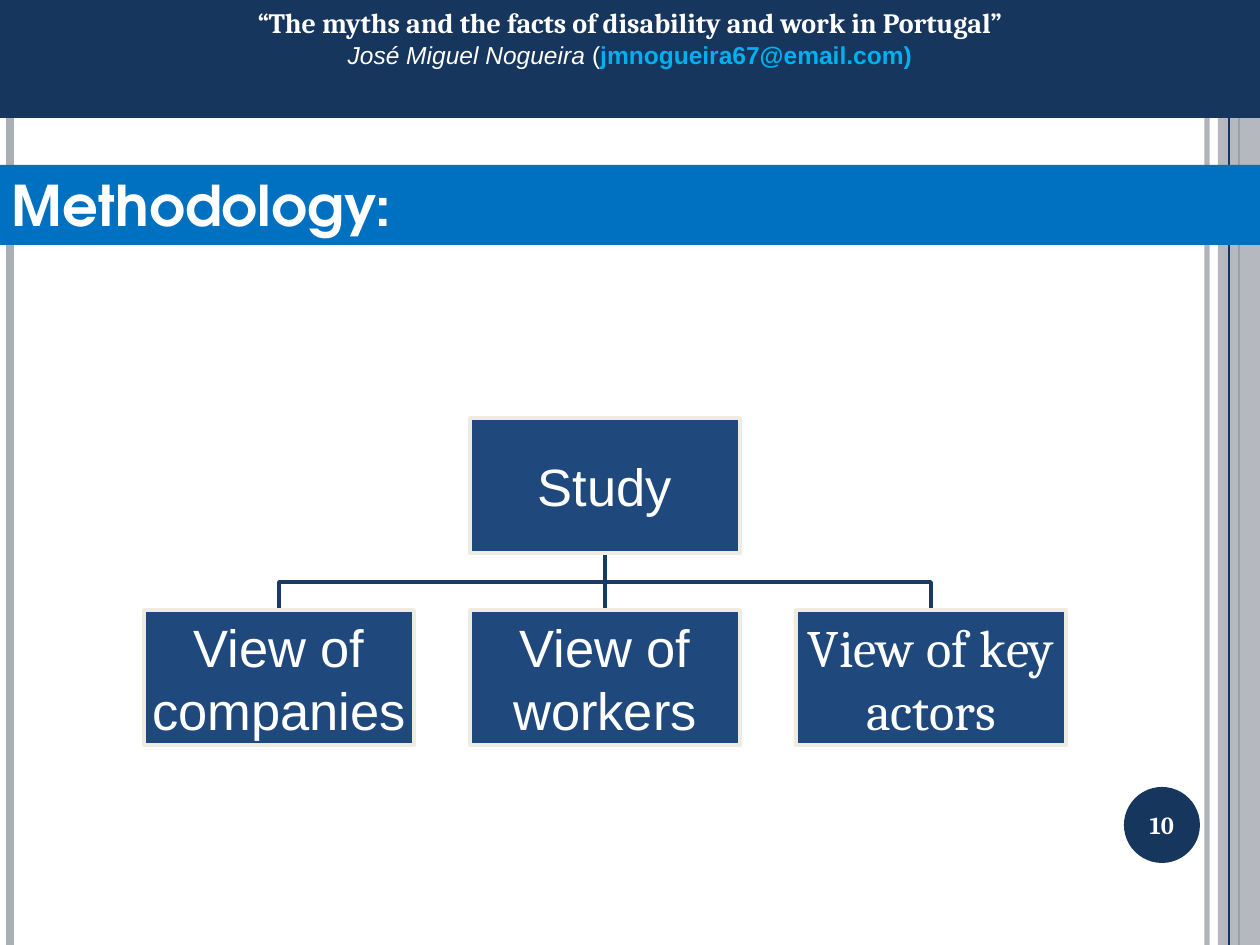
from dataclasses import dataclass

from lxml.etree import SubElement
from pptx import Presentation
from pptx.dml.color import RGBColor as RGB
from pptx.enum.shapes import MSO_CONNECTOR as Link, MSO_SHAPE as Shape
from pptx.enum.text import MSO_ANCHOR as Anchor, PP_ALIGN as Align
from pptx.oxml.ns import qn
from pptx.util import Emu, Pt

SCALE = 914400 / 126


def px(n):
    return Emu(round(n * SCALE))


@dataclass(frozen=True)
class Theme:
    navy: str = "17365D"
    blue: str = "0070C0"
    sky: str = "00B0F0"
    box: str = "1F497D"
    edge: str = "EEECE1"
    link: str = "193A64"
    grey: str = "ACAEB6"
    white: str = "FFFFFF"
    sans: str = "Arial"
    serif: str = "Cambria"
    head: str = "TeX Gyre Adventor"
    title: int = 32
    body: int = 30
    top: int = 16
    small: int = 14


def write(para, text, font, size, color, bold=False, italic=False):
    run = para.add_run()
    run.text = text
    face = run.font
    face.name, face.size = font, Pt(size)
    face.bold, face.italic = bold, italic
    face.color.rgb = RGB.from_string(color)


def fade(fill, alpha):
    """Set the opacity, in percent, of a solid fill."""
    color = fill.find(".//" + qn("a:srgbClr"))
    SubElement(color, qn("a:alpha")).set("val", str(alpha * 1000))


class Page:
    def __init__(self, slide, theme):
        self.slide, self.theme = slide, theme

    def ink(self, item, color, width):
        item.line.color.rgb = RGB.from_string(color)
        item.line.width = Pt(width)

    def line(self, x1, y1, x2, y2, color, width, alpha=100):
        item = self.slide.shapes.add_connector(
            Link.STRAIGHT, px(x1), px(y1), px(x2), px(y2))
        self.ink(item, color, width)
        props = item._element.spPr
        SubElement(props, qn("a:effectLst"))
        if alpha < 100:
            fade(props, alpha)

    def elbow(self, x1, y1, x2, y2, color, width):
        mid = (y1 + y2) / 2
        path = self.slide.shapes.build_freeform(x1, y1, scale=SCALE)
        path.add_line_segments([(x1, mid), (x2, mid), (x2, y2)], close=False)
        item = path.convert_to_shape()
        item.shadow.inherit = False
        item.fill.background()
        self.ink(item, color, width)

    def shape(self, x, y, w, h, fill, kind=Shape.RECTANGLE, edge=None, alpha=100):
        item = self.slide.shapes.add_shape(kind, px(x), px(y), px(w), px(h))
        item.shadow.inherit = False
        item.fill.solid()
        item.fill.fore_color.rgb = RGB.from_string(fill)
        if edge:
            self.ink(item, edge, 2)
        else:
            item.line.fill.background()
        if alpha < 100:
            fade(item._element.spPr, alpha)
        return item

    def frame(self, item, anchor=Anchor.MIDDLE, align=Align.CENTER, inset=(12, 6)):
        """Ready the text of a shape and return its frame."""
        frame = item.text_frame
        frame.word_wrap = True
        frame.vertical_anchor = anchor
        frame.margin_left = frame.margin_right = px(inset[0])
        frame.margin_top = frame.margin_bottom = px(inset[1])
        frame.paragraphs[0].alignment = align
        return frame

    def node(self, x, y, w, h, text, font):
        t = self.theme
        item = self.shape(x, y, w, h, t.box, edge=t.edge)
        para = self.frame(item, inset=(2, 2)).paragraphs[0]
        para.line_spacing = Pt(36)
        write(para, text, font, t.body, t.white)


def rails(page):
    t = page.theme
    page.line(1207, 0, 1207, 945, t.grey, 3, alpha=93)
    page.line(10, 0, 10, 945, t.grey, 4.5)
    page.line(1239, 0, 1239, 945, t.navy, 1.5)
    page.shape(1218, 0, 42, 945, t.grey, alpha=87)
    page.line(1229, 0, 1229, 945, t.navy, 0.75)


def badge(page):
    t = page.theme
    item = page.shape(1124, 787, 76, 76, t.navy, kind=Shape.OVAL)
    para = page.frame(item, inset=(0, 0)).paragraphs[0]
    write(para, "10", t.serif, t.small, t.white, bold=True)


def title(page):
    t = page.theme
    item = page.shape(0, 165, 1260, 80, t.blue)
    para = page.frame(item, Anchor.TOP, Align.LEFT).paragraphs[0]
    write(para, "Methodology:", t.head, t.title, t.white, bold=True)


def chart(page):
    t = page.theme
    wide, high, step = 270, 135, 326
    left, top, low = 144, 418, 610
    views = [("View of companies", t.sans), ("View of workers", t.sans),
             ("View of key actors", t.serif)]
    root = left + step
    stem, foot = root + wide / 2, top + high
    page.elbow(stem, foot, stem + step, low, t.link, 2)
    page.line(stem, foot, stem, low, t.link, 2)
    page.elbow(stem, foot, stem - step, low, t.link, 2)
    page.node(root, top, wide, high, "Study", t.sans)
    for i, (text, font) in enumerate(views):
        page.node(left + i * step, low, wide, high, text, font)


def banner(page):
    t = page.theme
    frame = page.frame(page.shape(0, 0, 1260, 118, t.navy), Anchor.TOP)
    write(frame.paragraphs[0],
          "“The myths and the facts of disability and work in Portugal”",
          t.serif, t.top, t.white, bold=True)
    para = frame.add_paragraph()
    para.alignment = Align.CENTER
    write(para, "José Miguel Nogueira ", t.sans, t.small, t.white, italic=True)
    write(para, "(", t.sans, t.small, t.white)
    write(para, "jmnogueira67@email.com)", t.sans, t.small, t.sky, bold=True)


def main():
    deck = Presentation()
    deck.slide_width, deck.slide_height = px(1260), px(945)
    page = Page(deck.slides.add_slide(deck.slide_layouts[6]), Theme())
    for part in (rails, badge, title, chart, banner):
        part(page)
    deck.save("out.pptx")


if __name__ == "__main__":
    main()
